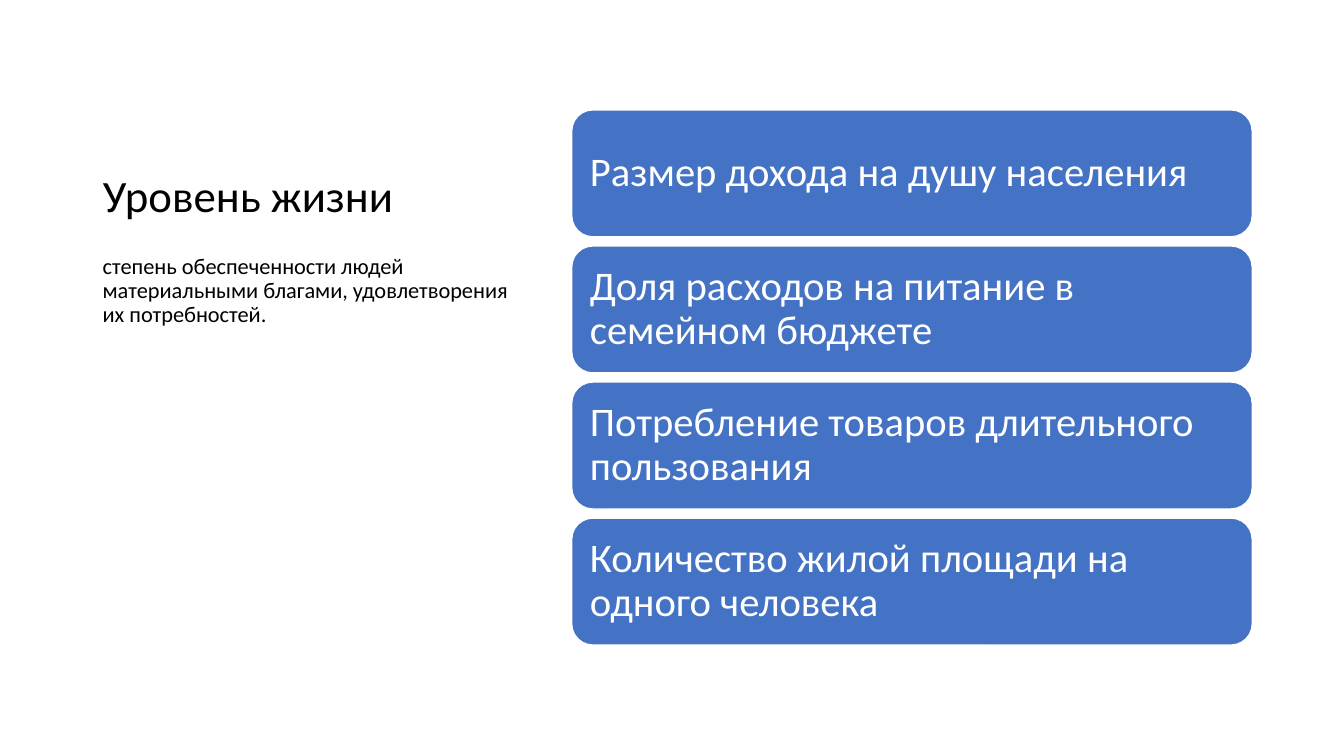
from dataclasses import dataclass

from pptx import Presentation
from pptx import util as u
from pptx.dml.color import RGBColor
from pptx.enum import shapes, text

TITLE = "Уровень жизни"
DEFINITION = ("степень обеспеченности людей материальными благами, "
              "удовлетворения их потребностей.")
INDICATORS = [
    "Размер дохода на душу населения",
    "Доля расходов на питание в семейном бюджете",
    "Потребление товаров длительного пользования",
    "Количество жилой площади на одного человека",
]


@dataclass(frozen=True)
class Theme:
    font: str = "Calibri"
    ink: str = "000000"
    paper: str = "FFFFFF"
    accent: str = "4472C4"
    title_size: float = 32
    body_size: float = 16
    card_size: float = 29


THEME = Theme()
SLIDE_SIZE = (13.33, 7.5)
TITLE_BOX = (0.92, 0.5, 4.3, 1.75)
DEFINITION_BOX = (0.92, 2.48, 4.3, 4.17)
CARD_LEFT, CARD_TOP, CARD_WIDTH, CARD_HEIGHT = 5.67, 1.09, 6.75, 1.26
CARD_PITCH = 1.35


def inches(values):
    return [u.Inches(value) for value in values]


def write(shape, content, *, size, color, anchor, margins=(0.1, 0.05), before=0):
    frame = shape.text_frame
    frame.word_wrap = True
    frame.auto_size = text.MSO_AUTO_SIZE.NONE
    frame.vertical_anchor = anchor
    frame.margin_left = frame.margin_right = u.Inches(margins[0])
    frame.margin_top = frame.margin_bottom = u.Inches(margins[1])
    paragraph = frame.paragraphs[0]
    paragraph.alignment = text.PP_ALIGN.LEFT
    paragraph.line_spacing = 0.9
    paragraph.space_before = u.Pt(before)
    run = paragraph.add_run()
    run.text = content
    run.font.name = THEME.font
    run.font.size = u.Pt(size)
    run.font.color.rgb = RGBColor.from_string(color)


def add_card(slide, row, content):
    box = (CARD_LEFT, CARD_TOP + row * CARD_PITCH, CARD_WIDTH, CARD_HEIGHT)
    card = slide.shapes.add_shape(shapes.MSO_SHAPE.ROUNDED_RECTANGLE, *inches(box))
    card.shadow.inherit = False
    card.fill.solid()
    card.fill.fore_color.rgb = RGBColor.from_string(THEME.accent)
    card.line.color.rgb = RGBColor.from_string(THEME.paper)
    card.line.width = u.Pt(1)
    write(card, content, size=THEME.card_size, color=THEME.paper,
          anchor=text.MSO_ANCHOR.MIDDLE, margins=(0.12, 0.12))


def main():
    presentation = Presentation()
    presentation.slide_width, presentation.slide_height = inches(SLIDE_SIZE)
    slide = presentation.slides.add_slide(
        presentation.slide_layouts.get_by_name("Title Only"))

    title = slide.shapes.title
    title.left, title.top, title.width, title.height = inches(TITLE_BOX)
    write(title, TITLE, size=THEME.title_size, color=THEME.ink,
          anchor=text.MSO_ANCHOR.BOTTOM)

    for row, indicator in enumerate(INDICATORS):
        add_card(slide, row, indicator)

    definition = slide.shapes.add_textbox(*inches(DEFINITION_BOX))
    write(definition, DEFINITION, size=THEME.body_size, color=THEME.ink,
          anchor=text.MSO_ANCHOR.TOP, before=10)

    presentation.save("out.pptx")


if __name__ == "__main__":
    main()
